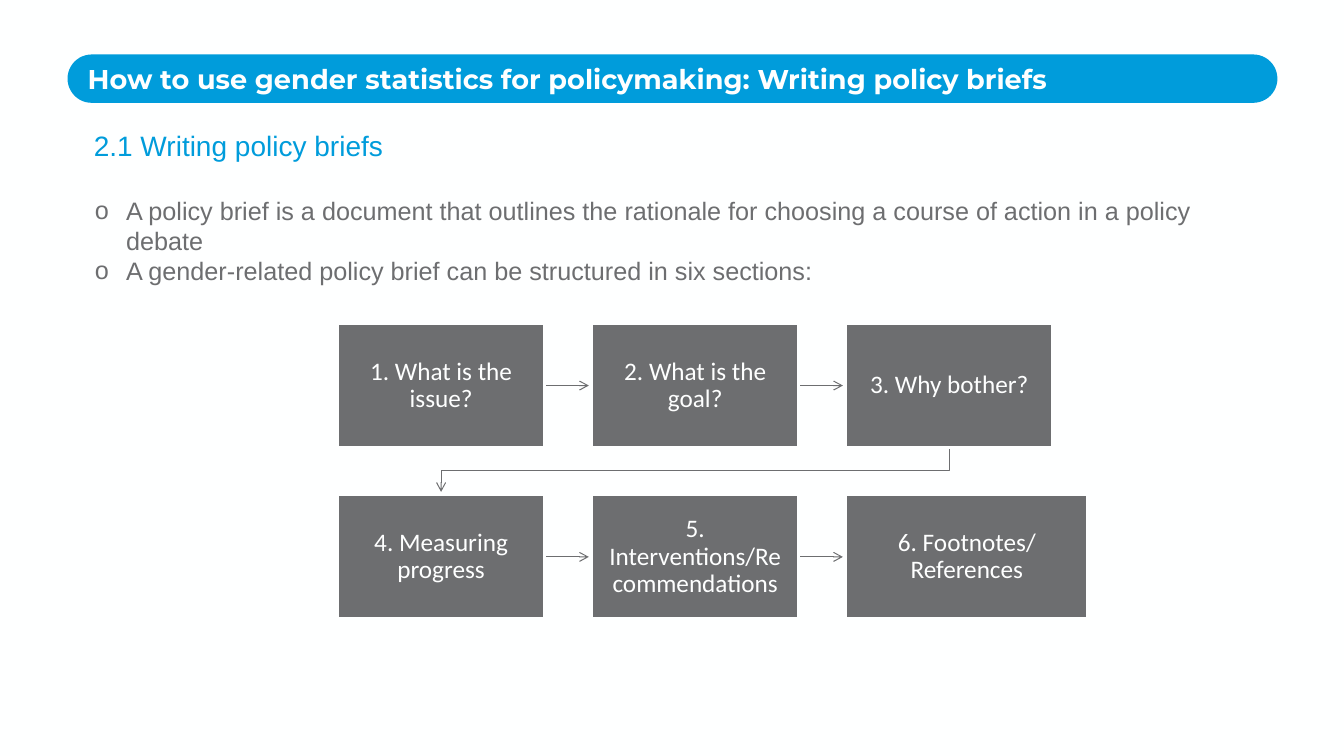
from lxml import etree
from pptx import Presentation
from pptx.dml.color import RGBColor as Rgb
from pptx.enum.shapes import MSO_CONNECTOR as Link, MSO_SHAPE as Kind
from pptx.enum.text import MSO_ANCHOR as Anchor, PP_ALIGN as Align
from pptx.oxml.ns import qn
from pptx.util import Inches, Pt

BLUE = Rgb(0x00, 0x9C, 0xDB)
GREY = Rgb(0x6D, 0x6E, 0x70)
WHITE = Rgb(0xFE, 0xFF, 0xFF)

TITLE = "How to use gender statistics for policymaking: Writing policy briefs"
HEAD = "2.1 Writing policy briefs"
POINTS = [
    "A policy brief is a document that outlines the rationale for choosing "
    "a course of action in a policy debate",
    "A gender-related policy brief can be structured in six sections:",
]
STEPS = [
    ["1. What is the issue?", "2. What is the goal?", "3. Why bother?"],
    ["4. Measuring progress", "5. Interventions/Recommendations",
     "6. Footnotes/ References"],
]
LEFT, TOP = 3.35, 3.21
WIDE, LAST, HIGH = 2.05, 2.4, 1.23
STEP_X, STEP_Y = 2.52, 1.7
REACH = 0.44

TITLE_FONT = dict(name="Montserrat", size=Pt(19.4), bold=True)
HEAD_FONT = dict(name="Arial", size=Pt(20))
POINT_FONT = dict(name="Arial", size=Pt(18))
STEP_FONT = dict(name="Calibri", size=Pt(18))


def style(para, look, color):
    for key, value in look.items():
        setattr(para.font, key, value)
    para.font.color.rgb = color


def inset(frame, size):
    for side in ("left", "top", "right", "bottom"):
        setattr(frame, f"margin_{side}", Inches(size))
    frame.word_wrap = True


def add_text(slide, x, y, w, h):
    frame = slide.shapes.add_textbox(*map(Inches, (x, y, w, h))).text_frame
    inset(frame, 0)
    return frame


def add_block(slide, kind, x, y, w, h, color):
    block = slide.shapes.add_shape(kind, *map(Inches, (x, y, w, h)))
    block.shadow.inherit = False
    block.fill.solid()
    block.fill.fore_color.rgb = color
    return block


def indent(para, left, hang=0):
    props = para._p.get_or_add_pPr()
    props.set("marL", str(Inches(left)))
    props.set("indent", str(Inches(hang)))
    return props


def point_line(shape):
    """Colour a line and put an open arrowhead at its end."""
    shape.line.color.rgb = GREY
    shape.line.width = Pt(0.75)
    props = shape._element.spPr
    etree.SubElement(props.find(qn("a:ln")), qn("a:tailEnd"), type="arrow")
    if props.find(qn("a:effectLst")) is None:
        etree.SubElement(props, qn("a:effectLst"))


def add_step(slide, text, x, y, w):
    box = add_block(slide, Kind.RECTANGLE, x, y, w, HIGH, GREY)
    box.line.color.rgb = WHITE
    box.line.width = Pt(2)
    frame = box.text_frame
    inset(frame, 0.14)
    frame.vertical_anchor = Anchor.MIDDLE
    para = frame.paragraphs[0]
    para.text = text
    para.alignment = Align.CENTER
    para.line_spacing = 0.9
    style(para, STEP_FONT, WHITE)


def add_title(slide):
    bar = add_block(slide, Kind.ROUNDED_RECTANGLE, 0.67, 0.54, 12, 0.48, BLUE)
    bar.adjustments[0] = 0.5
    bar.line.fill.background()
    para = add_text(slide, 0.87, 0.62, 11.61, 0.65).paragraphs[0]
    para.text = TITLE
    style(para, TITLE_FONT, WHITE)


def add_body(slide):
    frame = add_text(slide, 0.63, 1.27, 11.61, 1.58)
    head = frame.paragraphs[0]
    head.text = HEAD
    indent(head, 0.3)
    style(head, HEAD_FONT, BLUE)
    for i, text in enumerate(POINTS):
        para = frame.add_paragraph()
        para.text = text
        if i == 0:
            para.space_before = Pt(24)
        props = indent(para, 0.62, -0.31)
        etree.SubElement(props, qn("a:buFont"), typeface="Arial")
        etree.SubElement(props, qn("a:buChar"), char="o")
        style(para, POINT_FONT, GREY)


def add_flow(slide):
    for r, row in enumerate(STEPS):
        y = TOP + r * STEP_Y
        mid = y + HIGH / 2
        for c, text in enumerate(row):
            x = LEFT + c * STEP_X
            end = x + WIDE
            if c < len(row) - 1:
                ends = map(Inches, (end, mid, end + REACH, mid))
                point_line(slide.shapes.add_connector(Link.STRAIGHT, *ends))
            elif r == 0:
                add_turn(slide, x + WIDE / 2, y + HIGH)
            wide = LAST if (r, c) == (1, 2) else WIDE
            add_step(slide, text, x, y, wide)


def add_turn(slide, x, y):
    """Lead from the end of the first row to the start of the second."""
    back = LEFT + WIDE / 2
    bend = y + 0.23
    stops = [(x, bend), (back, bend), (back, y + REACH)]
    pen = slide.shapes.build_freeform(Inches(x), Inches(y))
    pen.add_line_segments([tuple(map(Inches, p)) for p in stops], close=False)
    turn = pen.convert_to_shape()
    turn.fill.background()
    turn.shadow.inherit = False
    point_line(turn)


def main():
    deck = Presentation()
    deck.slide_width, deck.slide_height = Inches(13.33), Inches(7.5)
    slide = deck.slides.add_slide(deck.slide_layouts[6])
    slide.background.fill.solid()
    slide.background.fill.fore_color.rgb = WHITE
    add_title(slide)
    add_body(slide)
    add_flow(slide)
    deck.save("out.pptx")


if __name__ == "__main__":
    main()
